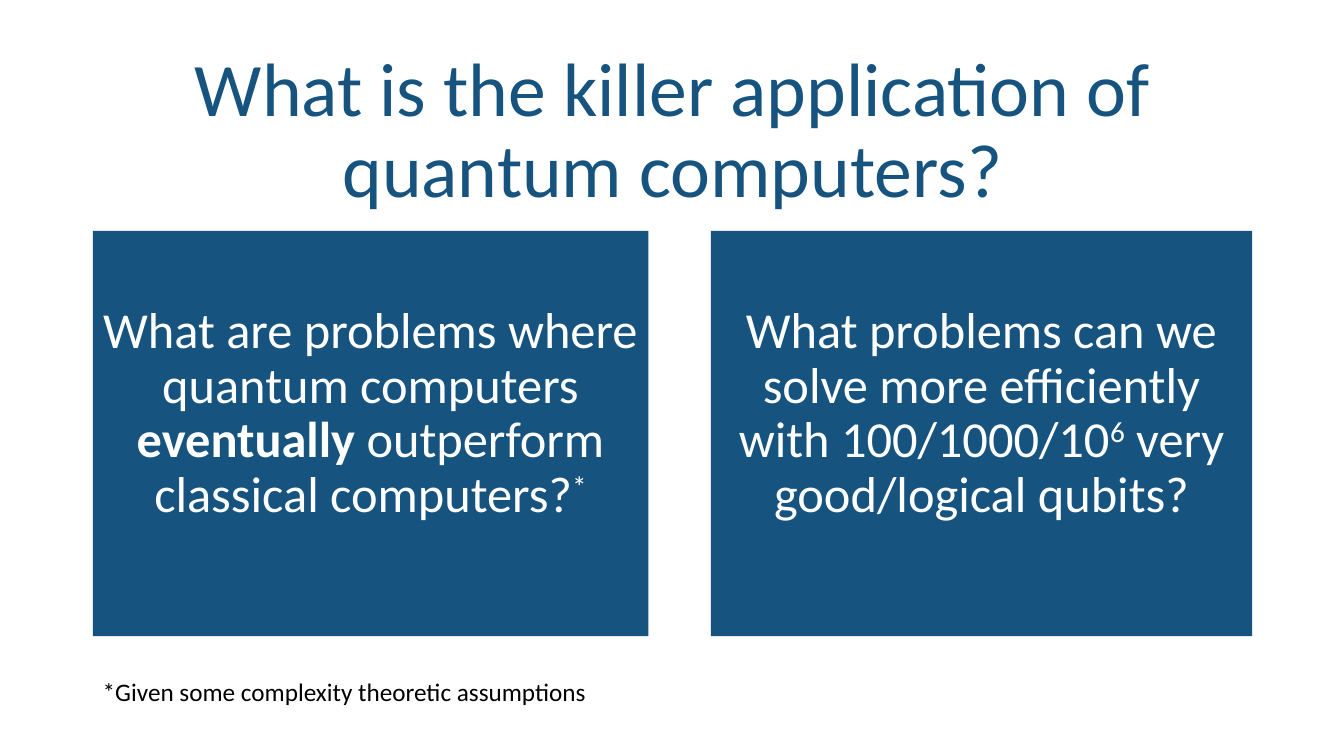
from dataclasses import dataclass

import pptx
import pptx.dml.color
import pptx.enum.shapes
import pptx.enum.text
import pptx.shapes.autoshape
import pptx.slide
import pptx.util

Inches = pptx.util.Inches
Color = pptx.dml.color.RGBColor
Align = pptx.enum.text.PP_ALIGN
Anchor = pptx.enum.text.MSO_ANCHOR


@dataclass(frozen=True)
class Theme:
    font: str = "Calibri"
    blue: Color = Color(0x16, 0x53, 0x7F)
    white: Color = Color(0xFF, 0xFF, 0xFF)
    black: Color = Color(0, 0, 0)
    title: int = 54
    body: int = 36
    note: int = 18
    leading: float = 0.9


@dataclass(frozen=True)
class Run:
    text: str
    bold: bool = False
    raised: bool = False


@dataclass(frozen=True)
class Panel:
    left: float
    width: float
    runs: tuple[Run, ...]


THEME = Theme()
MARGIN = 0.92
PANEL_TOP, PANEL_HEIGHT = 2.29, 4.02
PANEL_INSET = 0.74

PANELS = (
    Panel(MARGIN, 5.51, (
        Run("What are problems where quantum computers "),
        Run("eventually", bold=True),
        Run(" outperform classical computers?"),
        Run("*", raised=True),
    )),
    Panel(7.05, 5.37, (
        Run("What problems can we solve more efficiently with 100/1000/10"),
        Run("6", raised=True),
        Run(" very good/logical qubits?"),
    )),
)


def write(shape: pptx.shapes.autoshape.Shape, runs: tuple[Run, ...],
          size: int, color: Color, center: bool = True) -> None:
    """Fill the first paragraph; centred text also gets tight leading."""
    para = shape.text_frame.paragraphs[0]
    para.alignment = Align.CENTER if center else Align.LEFT
    if center:
        para.line_spacing = THEME.leading
    for item in runs:
        run = para.add_run()
        run.text = item.text
        run.font.name = THEME.font
        run.font.size = pptx.util.Pt(size)
        run.font.bold = item.bold
        run.font.color.rgb = color
        if item.raised:
            run._r.get_or_add_rPr().set("baseline", "30000")


def add_title(slide: pptx.slide.Slide) -> None:
    box = slide.shapes.add_textbox(
        Inches(MARGIN), Inches(0.59), Inches(11.5), Inches(1.45))
    box.text_frame.word_wrap = True
    box.text_frame.vertical_anchor = Anchor.MIDDLE
    title = Run("What is the killer application of quantum computers?")
    write(box, (title,), THEME.title, THEME.blue)


def add_panel(slide: pptx.slide.Slide, panel: Panel) -> None:
    box = slide.shapes.add_shape(
        pptx.enum.shapes.MSO_SHAPE.RECTANGLE,
        Inches(panel.left), Inches(PANEL_TOP),
        Inches(panel.width), Inches(PANEL_HEIGHT))
    box.shadow.inherit = False
    box.fill.solid()
    box.fill.fore_color.rgb = THEME.blue
    box.line.fill.background()
    frame = box.text_frame
    frame.word_wrap = True
    frame.vertical_anchor = Anchor.TOP
    frame.margin_top = Inches(PANEL_INSET)
    write(box, panel.runs, THEME.body, THEME.white)


def add_note(slide: pptx.slide.Slide) -> None:
    box = slide.shapes.add_textbox(
        Inches(MARGIN), Inches(6.66), Inches(5.12), Inches(0.4))
    box.text_frame.word_wrap = False
    box.text_frame.auto_size = pptx.enum.text.MSO_AUTO_SIZE.SHAPE_TO_FIT_TEXT
    note = Run("*Given some complexity theoretic assumptions")
    write(box, (note,), THEME.note, THEME.black, center=False)


def main() -> None:
    deck = pptx.Presentation()
    deck.slide_width = Inches(13.33)
    deck.slide_height = Inches(7.5)
    slide = deck.slides.add_slide(deck.slide_layouts[6])
    add_title(slide)
    for panel in PANELS:
        add_panel(slide, panel)
    add_note(slide)
    deck.save("out.pptx")


if __name__ == "__main__":
    main()
